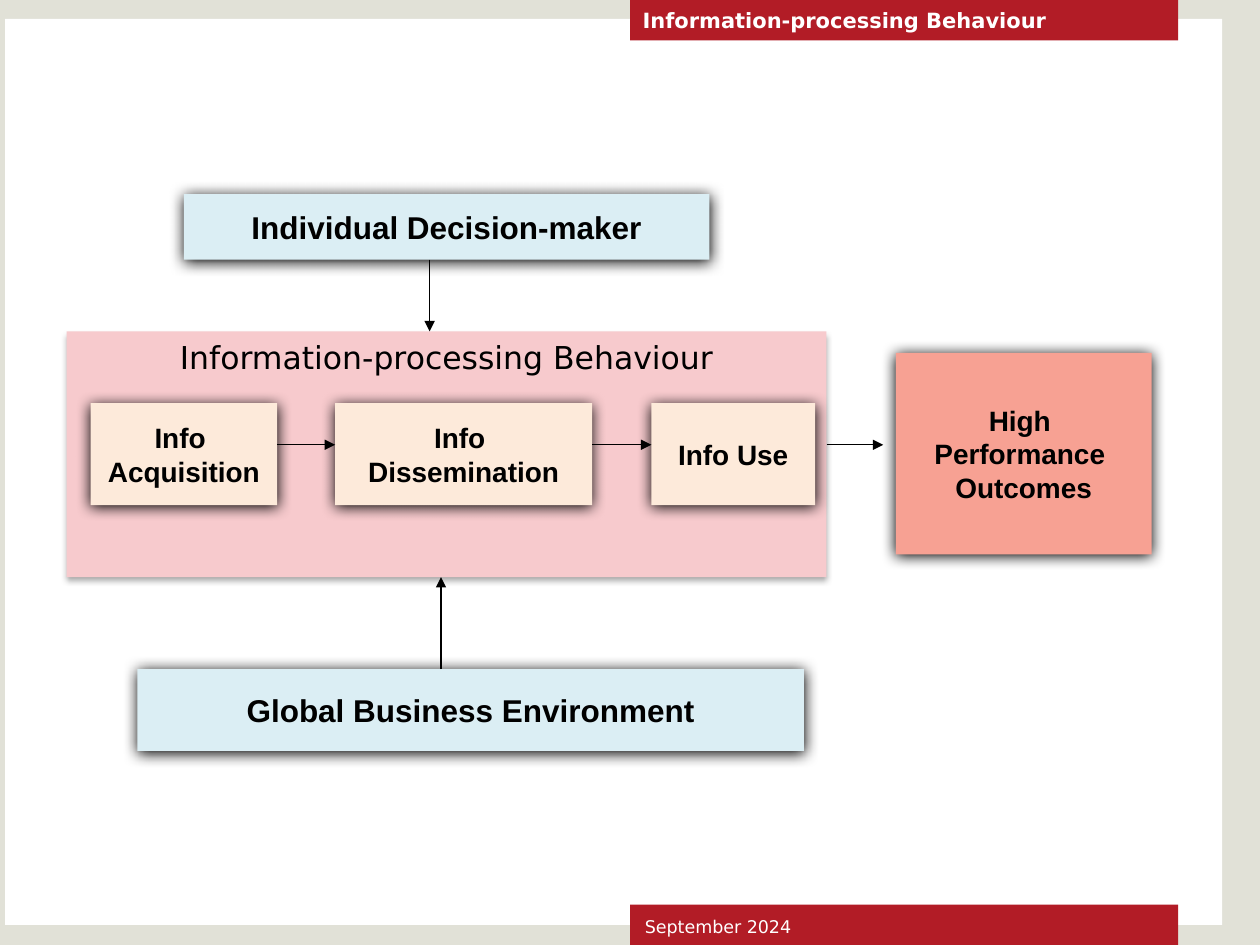
from dataclasses import dataclass

from lxml import etree
from pptx import Presentation
from pptx.dml.color import RGBColor
from pptx.enum.shapes import MSO_CONNECTOR, MSO_SHAPE
from pptx.enum.text import MSO_ANCHOR, MSO_AUTO_SIZE, PP_ALIGN
from pptx.oxml.ns import qn
from pptx.util import Inches, Pt

RECTANGLE = MSO_SHAPE.RECTANGLE
STRAIGHT = MSO_CONNECTOR.STRAIGHT
LEFT, CENTER = PP_ALIGN.LEFT, PP_ALIGN.CENTER
TOP, MIDDLE, BOTTOM = MSO_ANCHOR.TOP, MSO_ANCHOR.MIDDLE, MSO_ANCHOR.BOTTOM
TITLE_ONLY = 5


@dataclass(frozen=True)
class Theme:
    frame: str = "E1E1D7"
    white: str = "FFFFFF"
    black: str = "000000"
    red: str = "B21C26"
    pink: str = "F7CACD"
    cream: str = "FDEADA"
    salmon: str = "F7A193"
    blue: str = "DBEEF4"
    heading_font: str = "DejaVu Sans"
    label_font: str = "Arial"
    date_size: int = 10
    title_size: int = 12
    step_size: int = 16
    factor_size: int = 18
    # Shadows: opacity in percent, blur and distance in points
    strong_shadow: tuple = (100, 8.5, 1)
    soft_shadow: tuple = (32, 3.5, 2.2)


THEME = Theme()


def set_text(shape, lines, *, size, font=THEME.label_font, color=THEME.black,
             bold=False, align=CENTER, anchor=MIDDLE, wrap=False):
    """Write one paragraph per line in a shape and format them alike."""
    frame = shape.text_frame
    frame.text = "\n".join(lines)
    frame.word_wrap = wrap
    frame.auto_size = MSO_AUTO_SIZE.NONE
    frame.vertical_anchor = anchor
    for paragraph in frame.paragraphs:
        paragraph.alignment = align
        paragraph.font.name = font
        paragraph.font.size = Pt(size)
        paragraph.font.bold = bold
        paragraph.font.color.rgb = RGBColor.from_string(color)


def add_shadow(shape, opacity, blur, distance):
    """Give a shape a black shadow that falls straight down."""
    effects = shape.element.spPr.find(qn("a:effectLst"))
    shadow = etree.SubElement(
        effects, qn("a:outerShdw"), blurRad=str(Pt(blur)),
        dist=str(Pt(distance)), dir="5400000", algn="t", rotWithShape="0")
    color = etree.SubElement(shadow, qn("a:srgbClr"), val=THEME.black)
    etree.SubElement(color, qn("a:alpha"), val=str(opacity * 1000))


def add_box(slide, left, top, width, height, fill, shadow=None):
    shape = slide.shapes.add_shape(
        RECTANGLE, Inches(left), Inches(top), Inches(width), Inches(height))
    shape.shadow.inherit = False
    shape.fill.solid()
    shape.fill.fore_color.rgb = RGBColor.from_string(fill)
    shape.line.fill.background()
    if shadow:
        add_shadow(shape, *shadow)
    return shape


def add_label_box(slide, bounds, fill, lines, size):
    box = add_box(slide, *bounds, fill, THEME.strong_shadow)
    set_text(box, lines, size=size, bold=True)


def add_arrow(slide, start, end):
    x1, y1, x2, y2 = map(Inches, (*start, *end))
    arrow = slide.shapes.add_connector(STRAIGHT, x1, y1, x2, y2)
    arrow.line.width = Pt(0.75)
    arrow.line.color.rgb = RGBColor.from_string(THEME.black)
    line = arrow.element.spPr.find(qn("a:ln"))
    etree.SubElement(line, qn("a:tailEnd"), type="triangle")
    etree.SubElement(arrow.element.spPr, qn("a:effectLst"))


def add_page_frame(slide):
    add_box(slide, 0, 0, 10, 7.5, THEME.frame)
    add_box(slide, 0.04, 0.15, 9.66, 7.19, THEME.white)
    for top in (7.18, 0):
        add_box(slide, 5, top, 4.35, 0.32, THEME.red)

    date = slide.shapes.add_textbox(
        Inches(5.02), Inches(7.19), Inches(2.33), Inches(0.3))
    set_text(date, ["September 2024"], size=THEME.date_size, wrap=True,
             font=THEME.heading_font, color=THEME.white, align=LEFT,
             anchor=BOTTOM)


def add_title(slide, text):
    title = slide.shapes.title
    title.left, title.top = Inches(5), Inches(0.01)
    title.width, title.height = Inches(5), Inches(0.3)
    set_text(title, [text], size=THEME.title_size, font=THEME.heading_font,
             color=THEME.white, bold=True, align=LEFT, anchor=TOP, wrap=True)
    # Bring the title in front of its red bar
    title.element.getparent().append(title.element)


def add_process(slide):
    panel = add_box(slide, 0.53, 2.63, 6.03, 1.95, THEME.pink,
                    THEME.soft_shadow)
    set_text(panel, ["Information-processing Behaviour"], anchor=TOP,
             size=THEME.factor_size, font=THEME.heading_font)

    steps = [
        (0.72, 1.48, ["Info ", "Acquisition"]),
        (2.66, 2.04, ["Info ", "Dissemination"]),
        (5.17, 1.3, ["Info Use"]),
    ]
    for left, width, lines in steps:
        add_label_box(slide, (left, 3.2, width, 0.81), THEME.cream, lines,
                      THEME.step_size)
    # Arrows between neighbouring steps, then from the panel to the outcome
    gaps = [(left + width, following[0])
            for (left, width, _), following in zip(steps, steps[1:])]
    for start, end in gaps + [(6.56, 7.01)]:
        add_arrow(slide, (start, 3.53), (end, 3.53))


def main():
    presentation = Presentation()
    presentation.slide_width = Inches(10)
    presentation.slide_height = Inches(7.5)
    slide = presentation.slides.add_slide(
        presentation.slide_layouts[TITLE_ONLY])

    add_page_frame(slide)
    add_title(slide, "Information-processing Behaviour")
    add_process(slide)

    # Outcome
    add_label_box(slide, (7.11, 2.8, 2.03, 1.6), THEME.salmon,
                  ["High ", "Performance ", "Outcomes"], THEME.step_size)

    # Factors below and above the process
    add_label_box(slide, (1.09, 5.31, 5.29, 0.65), THEME.blue,
                  ["Global Business Environment"], THEME.factor_size)
    add_arrow(slide, (3.5, 5.31), (3.5, 4.58))
    add_label_box(slide, (1.46, 1.54, 4.17, 0.52), THEME.blue,
                  ["Individual Decision-maker"], THEME.factor_size)
    add_arrow(slide, (3.41, 2.06), (3.41, 2.63))

    presentation.save("out.pptx")


if __name__ == "__main__":
    main()
